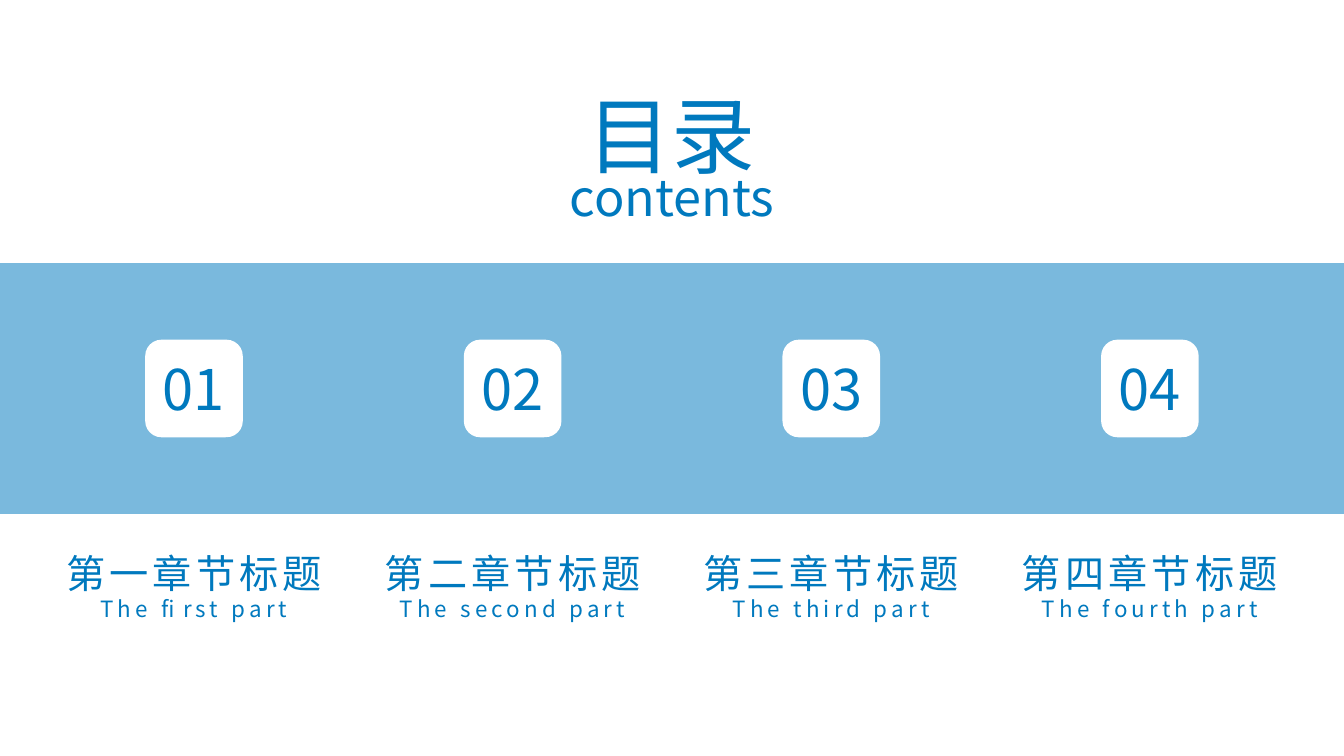
from lxml import etree
from pptx import Presentation
from pptx.dml.color import RGBColor
from pptx.enum.shapes import MSO_SHAPE
from pptx.enum.text import MSO_ANCHOR, MSO_AUTO_SIZE, PP_ALIGN
from pptx.oxml.ns import qn
from pptx.util import Cm, Pt

RECTANGLE = MSO_SHAPE.RECTANGLE
ROUNDED = MSO_SHAPE.ROUNDED_RECTANGLE
TOP, MIDDLE = MSO_ANCHOR.TOP, MSO_ANCHOR.MIDDLE
CENTER = PP_ALIGN.CENTER
NO_AUTOFIT = MSO_AUTO_SIZE.NONE

FONT = "Noto Sans CJK SC"
BLUE, WHITE = "0079BE", "FFFFFF"
WIDTH, HEIGHT = 33.87, 19.05
TITLE_ONLY = 5


def color(hex_string):
    return RGBColor.from_string(hex_string)


def write(shape, text, size, anchor=TOP, spacing=0):
    """Fill a shape with one centred blue line; spacing is in points."""
    frame = shape.text_frame
    frame.text = text
    frame.word_wrap = True
    frame.auto_size = NO_AUTOFIT
    frame.vertical_anchor = anchor
    paragraph = frame.paragraphs[0]
    paragraph.alignment = CENTER
    run = paragraph.runs[0]
    run.font.size = Pt(size)
    run.font.name = FONT
    run.font.color.rgb = color(BLUE)
    properties = run.font._element
    etree.SubElement(properties, qn("a:ea")).set("typeface", FONT)
    if spacing:
        properties.set("spc", str(spacing * 100))


presentation = Presentation()
presentation.slide_width, presentation.slide_height = Cm(WIDTH), Cm(HEIGHT)
slide = presentation.slides.add_slide(presentation.slide_layouts[TITLE_ONLY])
shapes = slide.shapes

# Translucent band across the slide
band = shapes.add_shape(RECTANGLE, 0, Cm(6.63), Cm(WIDTH), Cm(6.32))
band.shadow.inherit = False
band.fill.solid()
band.fill.fore_color.rgb = color(BLUE)
band.line.fill.background()
band_color = band.fill._xPr.find(qn("a:solidFill"))[0]
etree.SubElement(band_color, qn("a:alpha")).set("val", "52000")

# Title and subtitle
title = shapes.title
title.left, title.top = Cm((WIDTH - 8.51) / 2), Cm(1.98)
title.width, title.height = Cm(8.51), Cm(2.82)
write(title, "目录", 60)
subtitle = shapes.add_textbox(Cm((WIDTH - 6.73) / 2), Cm(4.06), Cm(6.73), Cm(1.8))
write(subtitle, "contents", 36)

# Four chapters, evenly spaced about the slide centre
chapters = [
    ("第一章节标题", "The first part"),
    ("第二章节标题", "The second part"),
    ("第三章节标题", "The third part"),
    ("第四章节标题", "The fourth part"),
]
PITCH, TILE = 8.03, 2.46
for index, (heading, part) in enumerate(chapters):
    center = WIDTH / 2 + (index - (len(chapters) - 1) / 2) * PITCH

    # Numbered tile
    tile = shapes.add_shape(ROUNDED, Cm(center - TILE / 2), Cm(8.56), Cm(TILE), Cm(TILE))
    tile.shadow.inherit = False
    tile.fill.solid()
    tile.fill.fore_color.rgb = color(WHITE)
    tile.line.fill.background()
    write(tile, f"{index + 1:02}", 40, MIDDLE)

    # Heading and its translation
    for text, size, top, width, height in (
        (heading, 28, 13.72, 7.52, 1.45),
        (part, 16, 14.88, 6.73, 0.94),
    ):
        caption = shapes.add_textbox(Cm(center - width / 2), Cm(top), Cm(width), Cm(height))
        write(caption, text, size, spacing=3)

presentation.save("out.pptx")
